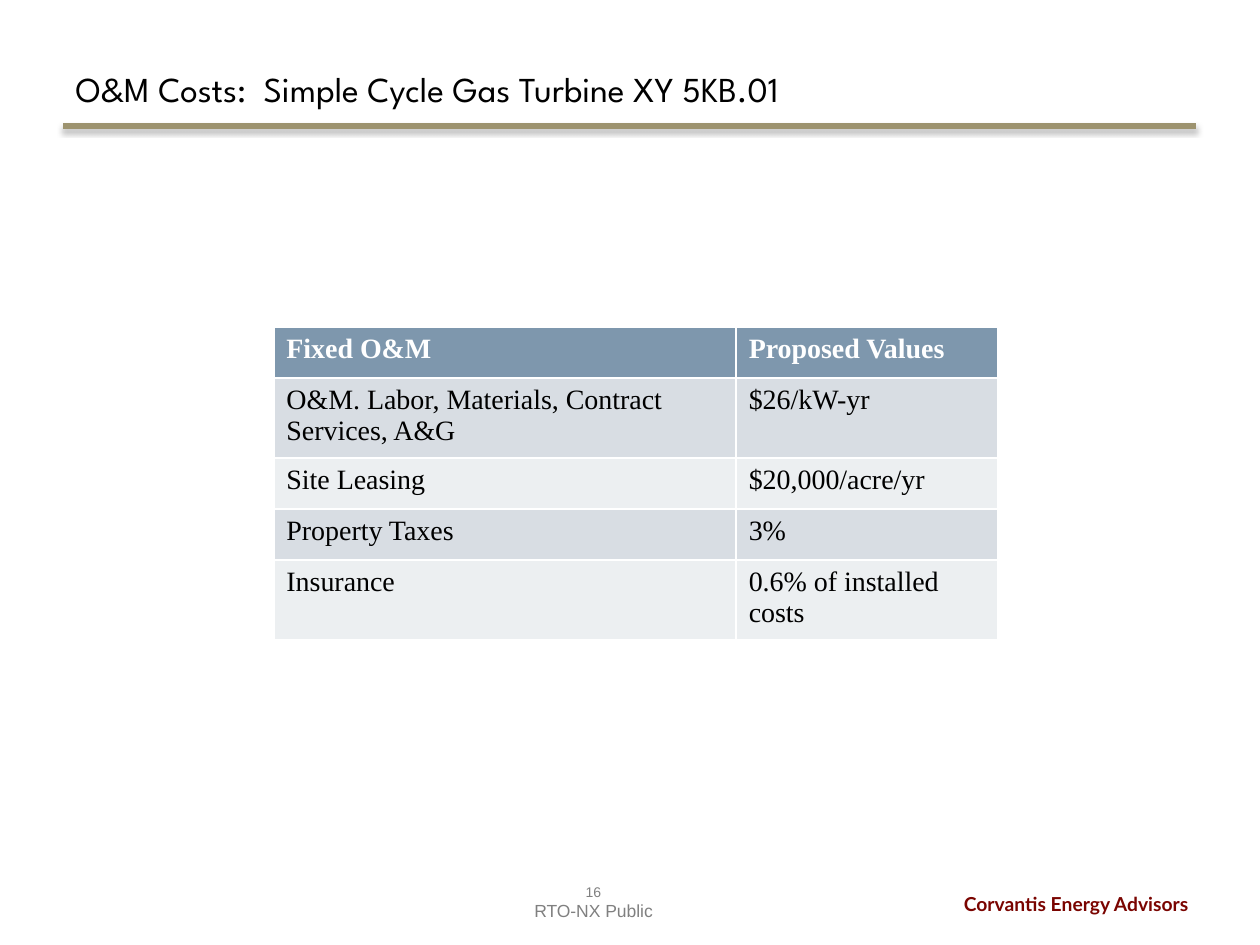
from lxml import etree
from pptx import Presentation
from pptx.dml.color import RGBColor
from pptx.enum.shapes import MSO_CONNECTOR
from pptx.enum.text import MSO_ANCHOR, PP_ALIGN
from pptx.oxml.ns import nsdecls
from pptx.util import Cm, Pt

COLORS = {
    "rule": "9D936F", "brand": "7A0400", "footer": "808080", "text": "000000",
    "white": "FFFFFF", "header": "7E97AD", "odd": "D8DDE3", "even": "ECEFF1",
}
TITLE = "O&M Costs:  Simple Cycle Gas Turbine XY 5KB.01"
ROWS = [
    ("Fixed O&M", "Proposed Values"),
    ("O&M. Labor, Materials, Contract Services, A&G", "$26/kW-yr"),
    ("Site Leasing", "$20,000/acre/yr"),
    ("Property Taxes", "3%"),
    ("Insurance", "0.6% of installed costs"),
]
COL_WIDTHS = (9.32, 5.28)
ROW_HEIGHT = 1.03
FORMATS = {
    "title": dict(name="League Spartan", size=Pt(20), bold=False, color="text"),
    "brand": dict(name="Lato", size=Pt(11), bold=True, color="brand"),
    "number": dict(name="Arial", size=Pt(8), color="footer"),
    "notice": dict(name="Arial", size=Pt(10), color="footer"),
    "head": dict(name="Times New Roman", size=Pt(16), bold=True, color="white"),
    "body": dict(name="Times New Roman", size=Pt(16), bold=False, color="text"),
}
FOOTERS = [
    ((14.71, 17.86, 9.5, 0.74), PP_ALIGN.RIGHT,
     [("Corvantis Energy Advisors", "brand")]),
    ((8.69, 17.68, 6.55, 0.76), PP_ALIGN.CENTER,
     [("16", "number"), ("RTO-NX Public", "notice")]),
]
SHADOW = f"""<a:effectLst {nsdecls('a')}>
<a:outerShdw blurRad="{Pt(3.1)}" dist="{Pt(1.8)}" dir="5400000" rotWithShape="0">
<a:srgbClr val="{COLORS['text']}"><a:alpha val="35000"/></a:srgbClr>
</a:outerShdw></a:effectLst>"""


def rgb(name):
    return RGBColor.from_string(COLORS[name])


def write(p, text, style):
    r = p.add_run()
    r.text = text
    for key, value in FORMATS[style].items():
        if key == "color":
            r.font.color.rgb = rgb(value)
        else:
            setattr(r.font, key, value)


def add_rule(s):
    line = s.shapes.add_connector(
        MSO_CONNECTOR.STRAIGHT, Cm(1.27), Cm(2.54), Cm(24.1), Cm(2.54))
    line.line.color.rgb = rgb("rule")
    line.line.width = Pt(3)
    line._element.spPr.append(etree.fromstring(SHADOW))


def add_footers(s):
    for box, align, lines in FOOTERS:
        tf = s.shapes.add_textbox(*map(Cm, box)).text_frame
        tf.word_wrap = True
        for i, (text, style) in enumerate(lines):
            p = tf.add_paragraph() if i else tf.paragraphs[0]
            p.alignment = align
            write(p, text, style)


def add_title(s):
    title = s.shapes.title
    title.left, title.top, title.width, title.height = map(
        Cm, (1.27, 0.76, 22.86, 1.57))
    tf = title.text_frame
    tf.vertical_anchor = MSO_ANCHOR.BOTTOM
    tf.paragraphs[0].alignment = PP_ALIGN.LEFT
    write(tf.paragraphs[0], TITLE, "title")


def add_costs(s):
    table = s.shapes.add_table(
        len(ROWS), len(COL_WIDTHS), Cm(5.52), Cm(6.59),
        Cm(sum(COL_WIDTHS)), Cm(ROW_HEIGHT * len(ROWS))).table
    for col, width in zip(table.columns, COL_WIDTHS):
        col.width = Cm(width)
    for i, row in enumerate(ROWS):
        table.rows[i].height = Cm(ROW_HEIGHT)
        fill = "header" if i == 0 else "odd" if i % 2 else "even"
        for j, text in enumerate(row):
            cell = table.cell(i, j)
            cell.fill.solid()
            cell.fill.fore_color.rgb = rgb(fill)
            write(cell.text_frame.paragraphs[0], text, "body" if i else "head")


def main():
    prs = Presentation()
    prs.slide_width, prs.slide_height = Cm(25.4), Cm(19.05)
    s = prs.slides.add_slide(prs.slide_layouts[5])
    add_rule(s)
    add_footers(s)
    add_title(s)
    add_costs(s)
    prs.save("out.pptx")


if __name__ == "__main__":
    main()
